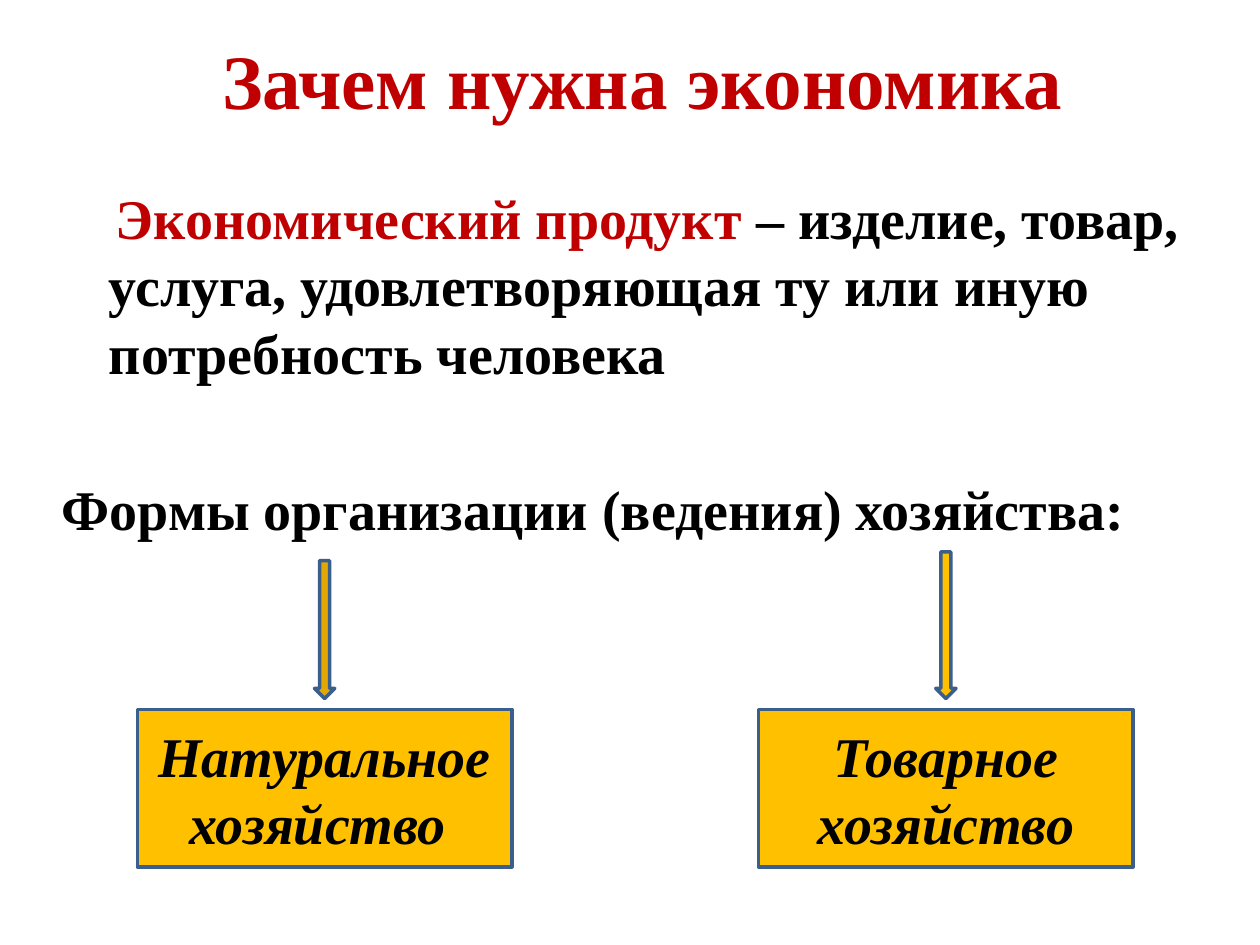
from pptx import Presentation
from pptx.dml.color import RGBColor
from pptx.enum import shapes, text
from pptx.oxml.ns import qn
from pptx.util import Pt

RED = RGBColor(0xC0, 0x00, 0x00)
BLACK = RGBColor(0, 0, 0)
GOLD = RGBColor(0xFF, 0xC0, 0x00)
AMBER = RGBColor(0xE4, 0xA8, 0x05)
BLUE = RGBColor(0x3A, 0x5F, 0x8C)


def write(para, words, size=32, color=BLACK, italic=False):
    run = para.add_run()
    run.text = words
    font = run.font
    font.name, font.size = "Times New Roman", Pt(size)
    font.bold, font.italic = True, italic
    font.color.rgb = color


def draw(kind, left, top, width, height, fill):
    shape = slide.shapes.add_shape(kind, Pt(left), Pt(top), Pt(width), Pt(height))
    shape.shadow.inherit = False
    shape.fill.solid()
    shape.fill.fore_color.rgb = fill
    shape.line.color.rgb = BLUE
    shape.line.width = Pt(2)
    return shape


deck = Presentation()
deck.slide_width, deck.slide_height = Pt(720), Pt(540)
slide = deck.slides.add_slide(deck.slide_layouts[1])

title, body = slide.placeholders
places = [(title, 50.4, 0, 633.6, 90), (body, 28, 90, 656, 427.7)]
for holder, left, top, width, height in places:
    holder.left, holder.top = Pt(left), Pt(top)
    holder.width, holder.height = Pt(width), Pt(height)
    holder.text_frame.auto_size = text.MSO_AUTO_SIZE.NONE

head = title.text_frame.paragraphs[0]
head.alignment = text.PP_ALIGN.CENTER
write(head, "Зачем нужна экономика", size=44, color=RED)

frame = body.text_frame
frame.margin_top = Pt(15)
term = frame.paragraphs[0]
forms = frame.add_paragraph()
# Left margin, first-line indent and space before, in points
for para, margin, indent, gap in [(term, 27, 4, 0), (forms, 27, -27, 51)]:
    props = para._p.get_or_add_pPr()
    props.set("marL", str(Pt(margin)))
    props.set("indent", str(Pt(indent)))
    para.space_before = Pt(gap)
    props.append(props.makeelement(qn("a:buNone"), {}))
write(term, "Экономический продукт ", color=RED)
write(term, "– изделие, товар, услуга, удовлетворяющая ту или иную потребность человека")
write(forms, "Формы организации (ведения) хозяйства:")

kinds = [
    ("Натуральное хозяйство ", 78.5, 320.4, AMBER),
    ("Товарное хозяйство", 433.5, 315.4, GOLD),
]
for name, left, top, tint in kinds:
    box = draw(shapes.MSO_SHAPE.RECTANGLE, left, 405.4, 214, 90, GOLD)
    box.text_frame.word_wrap = True
    box.text_frame.vertical_anchor = text.MSO_ANCHOR.MIDDLE
    label = box.text_frame.paragraphs[0]
    label.alignment = text.PP_ALIGN.CENTER
    write(label, name, italic=True)
    draw(shapes.MSO_SHAPE.DOWN_ARROW, left + 101.2, top, 11.6, 399.2 - top, tint)

deck.save("out.pptx")
